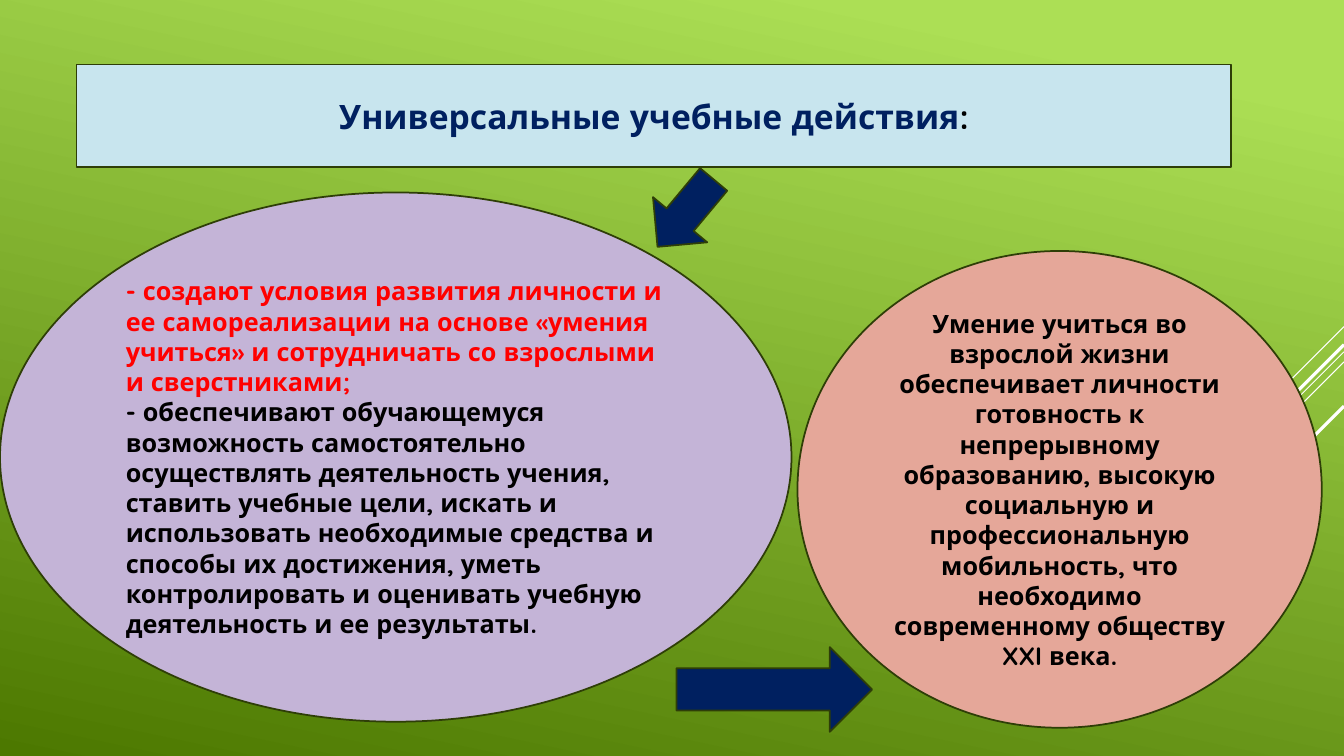
from dataclasses import dataclass

from lxml.etree import SubElement
from pptx import Presentation
from pptx.dml.color import RGBColor
from pptx.enum.shapes import MSO_CONNECTOR, MSO_SHAPE
from pptx.enum.text import MSO_ANCHOR, MSO_AUTO_SIZE, PP_ALIGN
from pptx.oxml.ns import qn
from pptx.util import Inches, Pt


@dataclass(frozen=True)
class Theme:
    font: str = "Quicksand"
    heading_size: int = 24
    text_size: int = 18
    outline_width: float = 1.25
    light_green: str = "ACDF55"
    dark_green: str = "4C7800"
    outline: str = "2E3E07"
    navy: str = "002060"
    pale_blue: str = "C8E5EE"
    lilac: str = "C4B4D7"
    salmon: str = "E5A799"
    red: str = "FF0000"
    black: str = "000000"
    white: str = "FFFFFF"


theme = Theme()


def paint(shape, fill):
    shape.fill.solid()
    shape.fill.fore_color.rgb = RGBColor.from_string(fill)
    shape.line.color.rgb = RGBColor.from_string(theme.outline)
    shape.line.width = Pt(theme.outline_width)
    shape.shadow.inherit = False


def add_text(paragraph, text, size, color):
    run = paragraph.add_run()
    run.text = text
    run.font.name = theme.font
    run.font.size = Pt(size)
    run.font.bold = True
    run.font.color.rgb = RGBColor.from_string(color)


presentation = Presentation()
presentation.slide_width = Inches(13.33)
presentation.slide_height = Inches(7.5)
slide = presentation.slides.add_slide(presentation.slide_layouts[5])

backdrop = slide.background.fill
backdrop.gradient()
backdrop.gradient_angle = 360 - 102
for stop, position, color in zip(
    backdrop.gradient_stops, (0.1, 1), (theme.light_green, theme.dark_green)
):
    stop.position = position
    stop.color.rgb = RGBColor.from_string(color)

for top, reach, width in [
    (3.24, 1, 0.75),
    (3.49, 3.26, 0.75),
    (3.59, 2.07, 0.75),
    (3.42, 1.91, 2.25),
    (4.03, 1.39, 2.25),
]:
    ray = slide.shapes.add_connector(
        MSO_CONNECTOR.STRAIGHT,
        Inches(13.33), Inches(top), Inches(13.33 - reach), Inches(top + reach),
    )
    ray.line.color.rgb = RGBColor.from_string(theme.white)
    ray.line.width = Pt(width)
    SubElement(ray._element.spPr, qn("a:effectLst"))

heading = slide.shapes.title
heading.left, heading.top = Inches(0.76), Inches(0.64)
heading.width, heading.height = Inches(11.45), Inches(1.02)
paint(heading, theme.pale_blue)
heading.text_frame.auto_size = MSO_AUTO_SIZE.NONE
heading.text_frame.vertical_anchor = MSO_ANCHOR.MIDDLE
heading_line = heading.text_frame.paragraphs[0]
heading_line.alignment = PP_ALIGN.CENTER
add_text(heading_line, "Универсальные учебные действия", theme.heading_size, theme.navy)
add_text(heading_line, ":", theme.heading_size, theme.black)

actions = [
    ("- создают условия развития личности и ее самореализации на основе "
     "«умения учиться» и сотрудничать со взрослыми и сверстниками;", theme.red),
    ("- обеспечивают обучающемуся возможность самостоятельно осуществлять "
     "деятельность учения, ставить учебные цели, искать и использовать "
     "необходимые средства и способы их достижения, уметь контролировать и "
     "оценивать учебную деятельность и ее результаты.", theme.black),
]
outcome = [
    ("Умение учиться во взрослой жизни обеспечивает личности готовность к "
     "непрерывному образованию, высокую социальную и профессиональную "
     "мобильность, что необходимо современному обществу XXI века.", theme.black),
]

for kind, box, rotation, fill, alignment, statements in [
    (MSO_SHAPE.RIGHT_ARROW, (6.71, 6.42, 1.94, 0.84), 0, theme.navy, None, []),
    (MSO_SHAPE.OVAL, (0, 1.91, 7.85, 5.25), 0, theme.lilac, PP_ALIGN.LEFT, actions),
    (MSO_SHAPE.OVAL, (7.91, 2.49, 5.2, 4.73), 0, theme.salmon, PP_ALIGN.CENTER, outcome),
    (MSO_SHAPE.DOWN_ARROW, (6.45, 1.68, 0.7, 0.87), 39.8, theme.navy, None, []),
]:
    figure = slide.shapes.add_shape(kind, *map(Inches, box))
    figure.rotation = rotation
    paint(figure, fill)
    frame = figure.text_frame
    frame.word_wrap = True
    frame.vertical_anchor = MSO_ANCHOR.MIDDLE
    for index, (statement, color) in enumerate(statements):
        paragraph = frame.add_paragraph() if index else frame.paragraphs[0]
        paragraph.alignment = alignment
        add_text(paragraph, statement, theme.text_size, color)

presentation.save("out.pptx")
